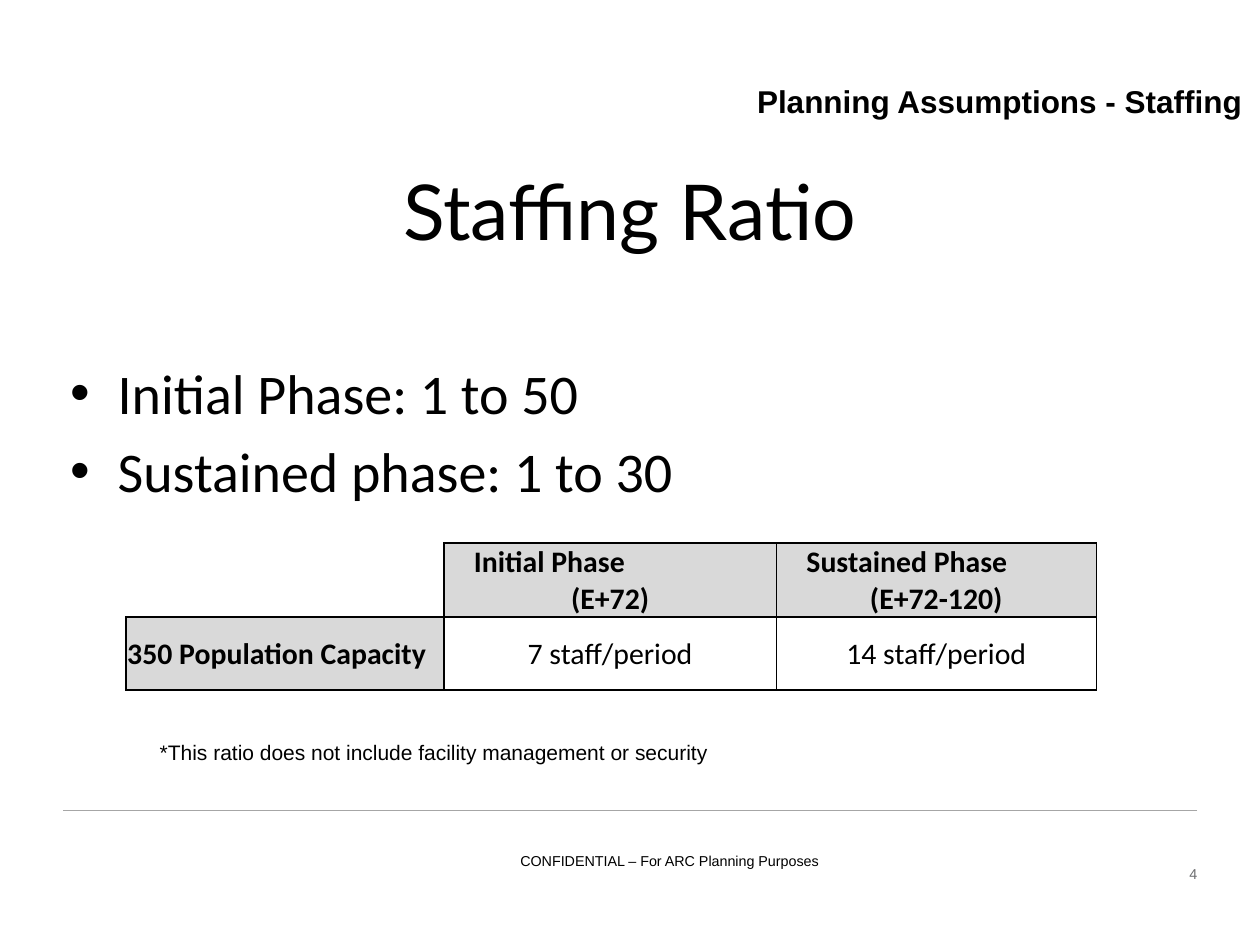
from lxml.etree import SubElement
from pptx import Presentation
from pptx.dml.color import RGBColor
from pptx.enum.shapes import MSO_CONNECTOR as Connector
from pptx.enum.text import MSO_ANCHOR as Anchor, MSO_AUTO_SIZE as AutoSize, PP_ALIGN as Align
from pptx.oxml.ns import qn
from pptx.util import Pt


def color(hex_string):
    return RGBColor.from_string(hex_string)


def add_text(paragraph, text, font, size, hex_string="000000", bold=False):
    run = paragraph.add_run()
    run.text = text
    run.font.name = font
    run.font.size = Pt(size)
    run.font.bold = bold
    run.font.color.rgb = color(hex_string)


presentation = Presentation()
presentation.slide_width, presentation.slide_height = Pt(720), Pt(540)
slide = presentation.slides.add_slide(presentation.slide_layouts[1])
shapes = slide.shapes

# Footer rule
rule = shapes.add_connector(Connector.STRAIGHT, Pt(684), Pt(463), Pt(36), Pt(463))
rule.line.color.rgb = color("A6A6A6")
rule.line.width = Pt(0.75)
SubElement(rule._element.spPr, qn("a:effectLst"))

# Title
title = shapes.title
title.left, title.top, title.width, title.height = Pt(36), Pt(75), Pt(648), Pt(90)
title.text_frame.auto_size = AutoSize.NONE
title.text_frame.vertical_anchor = Anchor.MIDDLE
title.text_frame.paragraphs[0].alignment = Align.CENTER
add_text(title.text_frame.paragraphs[0], "Staffing Ratio", "Lato", 44)

# Ratio list
body = slide.placeholders[1]
body.left, body.top, body.width, body.height = Pt(33), Pt(201), Pt(648), Pt(168)
body.text_frame.auto_size = AutoSize.NONE
for index, text in enumerate(["Initial Phase: 1 to 50", "Sustained phase: 1 to 30"]):
    paragraph = body.text_frame.add_paragraph() if index else body.text_frame.paragraphs[0]
    paragraph.space_before = Pt(6.4 * index)
    add_text(paragraph, text, "Calibri", 32)

# Staffing table: each cell holds its lines, bold, fill
rows = [
    [([], False, None),
     (["Initial Phase", "(E+72)"], True, "D9D9D9"),
     (["Sustained Phase", "(E+72-120)"], True, "D9D9D9")],
    [(["350 Population Capacity"], True, "D9D9D9"),
     (["7 staff/period"], False, None),
     (["14 staff/period"], False, None)],
]
table = shapes.add_table(2, 3, Pt(72), Pt(310.3), Pt(554.5), Pt(83.6)).table
table.first_row = table.horz_banding = False
for column, width in zip(table.columns, [181.7, 190, 182.8]):
    column.width = Pt(width)
for row_index, row in enumerate(rows):
    table.rows[row_index].height = Pt(41.8)
    for column_index, (lines, bold, fill) in enumerate(row):
        cell = table.cell(row_index, column_index)
        cell.vertical_anchor = Anchor.MIDDLE
        cell.margin_left = cell.margin_right = cell.margin_top = Pt(0.7)
        cell.margin_bottom = Pt(0)

        # Borders: the empty corner is white outside, the inner divider is thin
        for side in ["L", "R", "T", "B"]:
            thin = (side == "L" and column_index == 2) or (side == "R" and column_index == 1)
            border = SubElement(cell._tc.get_or_add_tcPr(), qn(f"a:ln{side}"),
                                w=str(Pt(0.5 if thin else 1)))
            border_fill = SubElement(border, qn("a:solidFill"))
            white = not lines and side in "LT"
            SubElement(border_fill, qn("a:srgbClr"), val="FFFFFF" if white else "000000")
        if fill:
            cell.fill.solid()
            cell.fill.fore_color.rgb = color(fill)
        else:
            cell.fill.background()

        for line_index, text in enumerate(lines):
            frame = cell.text_frame
            paragraph = frame.add_paragraph() if line_index else frame.paragraphs[0]
            paragraph.alignment = Align.CENTER if column_index else Align.LEFT
            if len(lines) == 2 and line_index == 0:
                paragraph.alignment = Align.LEFT
                paragraph._p.get_or_add_pPr().set("marL", str(Pt(16.5)))
            add_text(paragraph, text, "Calibri", 17, bold=bold)

# Section heading, footnote, footer and slide number
labels = [
    ("Planning Assumptions - Staffing", 425.5, 43.2, 294.5, 29, 18, "000000", True, Align.LEFT),
    ("*This ratio does not include facility management or security",
     84.2, 419, 486, 21.6, 12, "000000", False, Align.LEFT),
    ("CONFIDENTIAL – For ARC Planning Purposes",
     216, 483.3, 333.4, 19.4, 8.2, "000000", False, Align.CENTER),
    ("4", 643, 491, 48.2, 14.4, 8.2, "6D6E70", False, Align.RIGHT),
]
for text, left, top, width, height, size, hex_string, bold, alignment in labels:
    frame = shapes.add_textbox(Pt(left), Pt(top), Pt(width), Pt(height)).text_frame
    frame.word_wrap = not bold
    frame.paragraphs[0].alignment = alignment
    add_text(frame.paragraphs[0], text, "Arial", size, hex_string, bold)

presentation.save("out.pptx")
